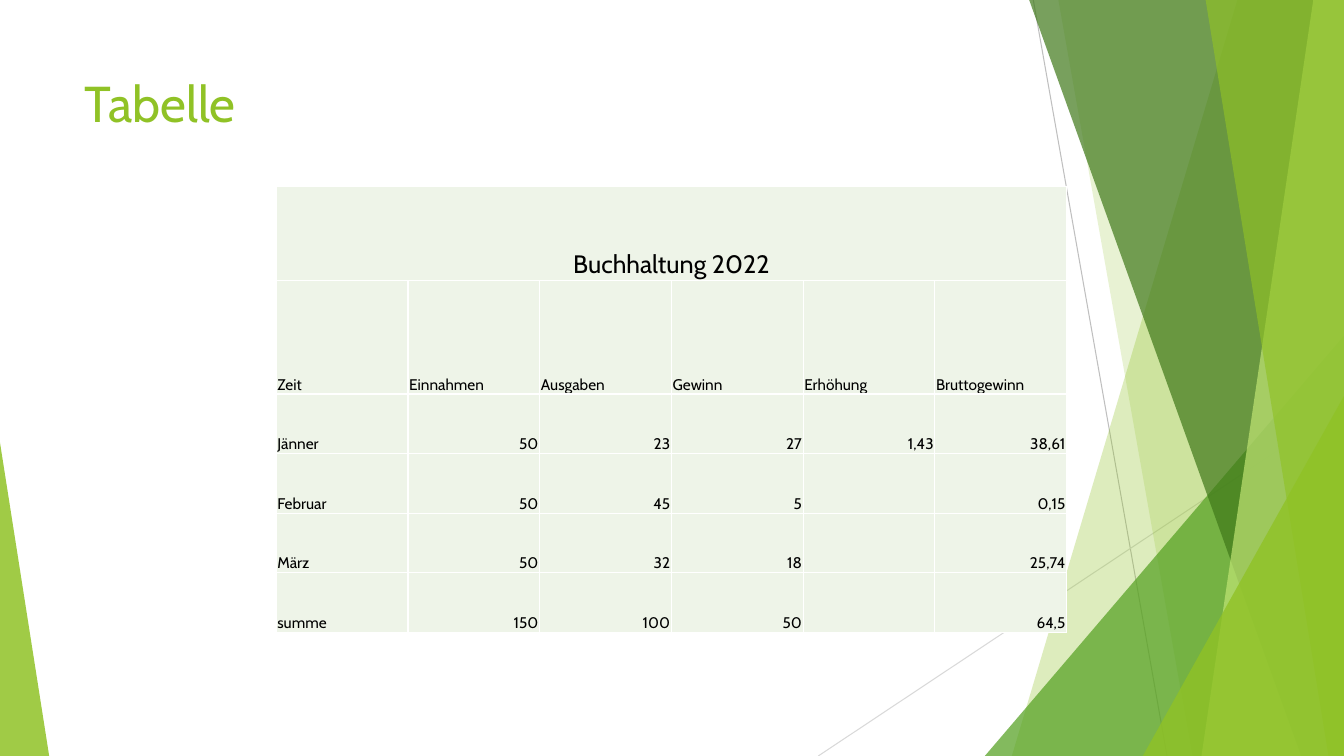
"""Builds the slide "Tabelle" with a bookkeeping table and green facets."""
from dataclasses import dataclass

from lxml.etree import SubElement
from pptx import Presentation
from pptx.dml.color import RGBColor
from pptx.enum.shapes import MSO_CONNECTOR as Connector, MSO_SHAPE as Preset
from pptx.enum.text import MSO_ANCHOR as Anchor, PP_ALIGN as Align
from pptx.oxml import parse_xml
from pptx.oxml.ns import nsdecls, qn
from pptx.shapes.autoshape import Shape
from pptx.slide import Slide
from pptx.table import _Cell as Cell
from pptx.text.text import _Paragraph as Paragraph
from pptx.util import Cm, Pt

FONT = "Cabin"
GREEN = "90C226"
WIDTH, HEIGHT = 33.87, 19.05
FACET_TOP = -0.02


@dataclass
class Line:
    start: tuple[float, float]
    end: tuple[float, float]
    color: str


@dataclass
class Facet:
    top_left: float
    bottom_left: float
    color: str
    opacity: int


@dataclass
class Triangle:
    left: float
    top: float
    width: float
    apex: float
    color: str
    opacity: int


LINES = [
    Line((26.04, 0), (29.41, HEIGHT), "BFBFBF"),
    Line((WIDTH, 10.24), (20.62, HEIGHT), "D9D9D9"),
]
DECORATION = [
    Facet(31.19, 25.5, GREEN, 30),
    Facet(26.67, 30.05, GREEN, 20),
    Triangle(24.82, 8.46, 9.05, 1, "54A021", 72),
    Facet(25.93, 32.79, "3F7819", 70),
    Facet(33.1, 30.28, "C0E474", 70),
    Facet(30.38, 33.48, GREEN, 65),
    Triangle(28.8, 9.98, 5.07, 1, GREEN, 80),
    Triangle(0, 11.15, 1.24, 0, GREEN, 85),
]
ROWS = [
    ["Buchhaltung 2022", "", "", "", "", ""],
    ["Zeit", "Einnahmen", "Ausgaben", "Gewinn", "Erhöhung", "Bruttogewinn"],
    ["Jänner", "50", "23", "27", "1,43", "38,61"],
    ["Februar", "50", "45", "5", "", "0,15"],
    ["März", "50", "32", "18", "", "25,74"],
    ["summe", "150", "100", "50", "", "64,5"],
]
ROW_HEIGHTS = [2.36, 2.87, 1.5, 1.5, 1.5, 1.5]
COLUMN_WIDTH = 3.32


def rgb(color: str) -> RGBColor:
    return RGBColor.from_string(color)


def paint(shape: Shape, color: str, opacity: int) -> None:
    shape.shadow.inherit = False
    shape.line.fill.background()
    shape.fill.solid()
    shape.fill.fore_color.rgb = rgb(color)
    color_node = shape.fill._xPr.find(qn("a:solidFill"))[0]
    SubElement(color_node, qn("a:alpha"), val=str(opacity * 1000))


def draw_line(slide: Slide, line: Line) -> None:
    ends = [Cm(value) for value in line.start + line.end]
    connector = slide.shapes.add_connector(Connector.STRAIGHT, *ends)
    connector.line.color.rgb = rgb(line.color)
    connector.line.width = Pt(0.75)
    SubElement(connector._element.spPr, qn("a:effectLst"))


def draw_facet(slide: Slide, facet: Facet) -> None:
    builder = slide.shapes.build_freeform(Cm(facet.top_left), Cm(FACET_TOP))
    corners = [(WIDTH, FACET_TOP), (WIDTH, HEIGHT), (facet.bottom_left, HEIGHT)]
    builder.add_line_segments([(Cm(x), Cm(y)) for x, y in corners], close=True)
    paint(builder.convert_to_shape(), facet.color, facet.opacity)


def draw_triangle(slide: Slide, triangle: Triangle) -> None:
    shape = slide.shapes.add_shape(
        Preset.ISOSCELES_TRIANGLE, Cm(triangle.left), Cm(triangle.top),
        Cm(triangle.width), Cm(HEIGHT - triangle.top))
    shape.adjustments[0] = triangle.apex
    paint(shape, triangle.color, triangle.opacity)


def format_text(paragraph: Paragraph, size: int, color: str) -> None:
    for font in [paragraph.font] + [run.font for run in paragraph.runs]:
        font.name = FONT
        font.size = Pt(size)
        font.color.rgb = rgb(color)


def draw_title(slide: Slide) -> None:
    title = slide.shapes.add_textbox(Cm(1.88), Cm(1.7), Cm(23.88), Cm(3.66))
    title.text_frame.word_wrap = True
    title.text_frame.text = "Tabelle"
    format_text(title.text_frame.paragraphs[0], 36, GREEN)


def format_cell(cell: Cell) -> None:
    cell.vertical_anchor = Anchor.BOTTOM
    cell.margin_left = cell.margin_right = cell.margin_top = Cm(0.03)
    cell.margin_bottom = 0
    cell.fill.solid()
    cell.fill.fore_color.rgb = rgb("EEF4E8")
    properties = cell._tc.get_or_add_tcPr()
    for index, side in enumerate("LRTB"):
        properties.insert(index, parse_xml(
            f'<a:ln{side} {nsdecls("a")} w="{Pt(1)}"><a:solidFill>'
            f'<a:srgbClr val="FFFFFF"/></a:solidFill></a:ln{side}>'))


def draw_table(slide: Slide) -> None:
    columns = len(ROWS[0])
    table = slide.shapes.add_table(
        len(ROWS), columns, Cm(6.96), Cm(4.7),
        Cm(columns * COLUMN_WIDTH), Cm(sum(ROW_HEIGHTS))).table
    table.first_row = table.horz_banding = False
    for column in table.columns:
        column.width = Cm(COLUMN_WIDTH)
    for row_index, texts in enumerate(ROWS):
        table.rows[row_index].height = Cm(ROW_HEIGHTS[row_index])
        for column_index, text in enumerate(texts):
            cell = table.cell(row_index, column_index)
            format_cell(cell)
            paragraph = cell.text_frame.paragraphs[0]
            paragraph.text = text
            format_text(paragraph, 18 if row_index == 0 else 11, "000000")
            if row_index == 0:
                paragraph.alignment = Align.CENTER
            elif row_index > 1 and column_index > 0:
                paragraph.alignment = Align.RIGHT
    table.cell(0, 0).merge(table.cell(0, columns - 1))


def main() -> None:
    presentation = Presentation()
    presentation.slide_width, presentation.slide_height = Cm(WIDTH), Cm(HEIGHT)
    slide = presentation.slides.add_slide(presentation.slide_layouts[6])
    for line in LINES:
        draw_line(slide, line)
    for item in DECORATION:
        if isinstance(item, Facet):
            draw_facet(slide, item)
        else:
            draw_triangle(slide, item)
    draw_title(slide)
    draw_table(slide)
    presentation.save("out.pptx")


if __name__ == "__main__":
    main()
